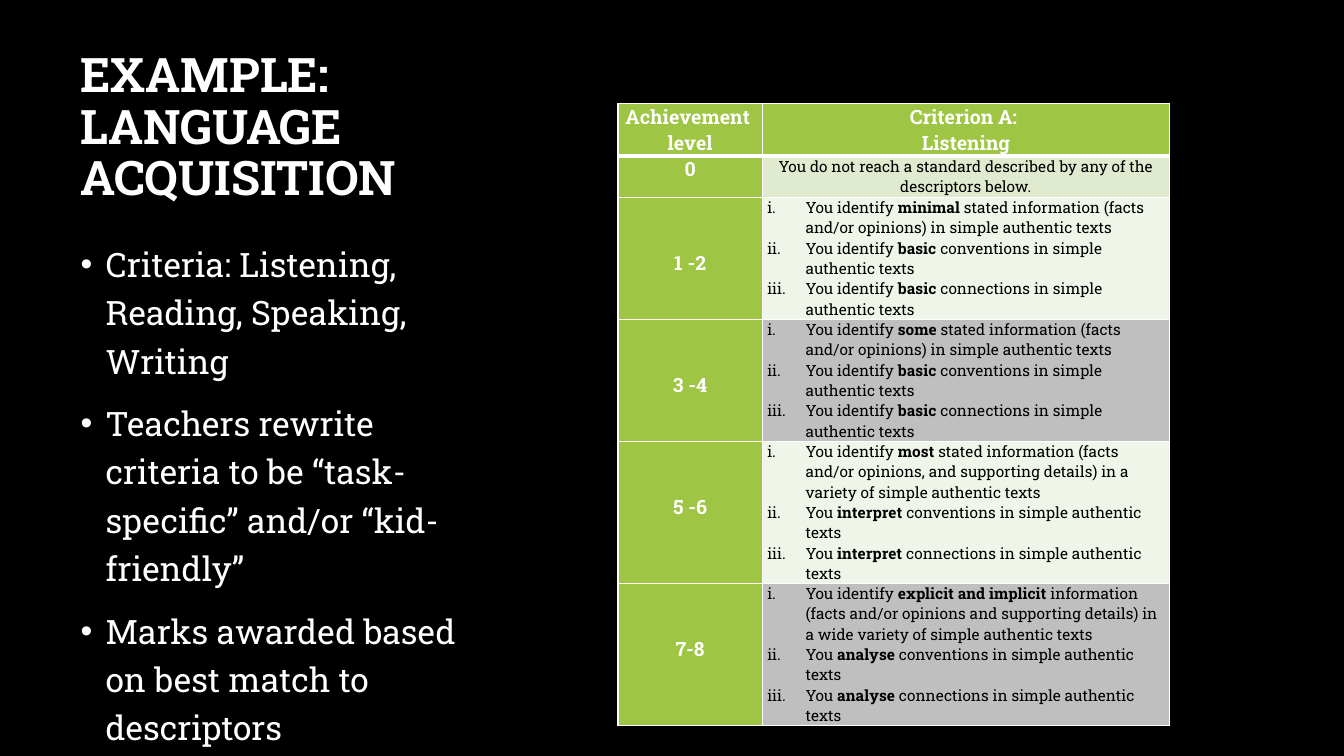
import lxml.etree
import pptx
import pptx.dml.color
import pptx.enum.text
import pptx.oxml.ns
import pptx.util

FONT = "Roboto Slab"
WIDTH, HEIGHT = 13.33, 7.5
BLACK, WHITE, GREEN = "000000", "FFFFFF", "9EC544"
MINT, PALE, GREY = "DFEACF", "F0F5E9", "BFBFBF"
INDENT_BODY, INDENT_CELL = 0.25, 0.38
LEVEL_DROP = 0.52
ALIGN = pptx.enum.text.PP_ALIGN
ANCHOR = pptx.enum.text.MSO_ANCHOR

TITLE = "EXAMPLE: LANGUAGE ACQUISITION"
POINTS = [
    "Criteria: Listening, Reading, Speaking, Writing",
    "Teachers rewrite criteria to be “task-specific” and/or “kid-friendly”",
    "Marks awarded based on best match to descriptors",
]
COLUMNS = [1.43, 4.04]
ROWS = [0.52, 0.41, 1.21, 1.21, 1.41, 1.41]
HEADERS = [["Achievement ", "level"], ["Criterion A: ", "Listening"]]
ZERO_TEXT = "You do not reach a standard described by any of the descriptors below."
LEVELS = [
    ("1 -2", PALE, [
        "You identify *minimal* stated information (facts and/or opinions) in simple authentic texts",
        "You identify* basic *conventions in simple authentic texts",
        "You identify *basic* connections in simple authentic texts"]),
    ("3 -4", GREY, [
        "You identify *some *stated information (facts and/or opinions) in simple authentic texts",
        "You identify *basic* conventions in simple authentic texts",
        "You identify *basic* connections in simple authentic texts"]),
    ("5 -6", PALE, [
        "You identify *most *stated information (facts and/or opinions, and supporting details) "
        "in a variety of simple authentic texts",
        "You *interpret* conventions in simple authentic texts",
        "You* interpret *connections in simple authentic texts"]),
    ("7-8", GREY, [
        "You identify *explicit and implicit *information (facts and/or opinions and supporting "
        "details) in a wide variety of simple authentic texts",
        "You* analyse *conventions in simple authentic texts",
        "You *analyse* connections in simple authentic texts"]),
]


def color(value):
    """Turn a hex string into a colour."""
    return pptx.dml.color.RGBColor.from_string(value)


def add_element(parent, tag, **attributes):
    """Append a DrawingML element to its parent."""
    element = lxml.etree.SubElement(parent, pptx.oxml.ns.qn(tag))
    for name, value in attributes.items():
        element.set(name, str(value))
    return element


def write(frame, lines, size, ink, bold=False, align=ALIGN.LEFT):
    """Fill a frame with one paragraph per line; asterisks enclose bold words."""
    frame.word_wrap = True
    for index, line in enumerate(lines):
        paragraph = frame.paragraphs[0] if index == 0 else frame.add_paragraph()
        paragraph.alignment = align
        paragraph.font.name = FONT
        paragraph.font.size = pptx.util.Pt(size)
        paragraph.font.color.rgb = color(ink)
        for part, words in enumerate(line.split("*")):
            run = paragraph.add_run()
            run.text = words
            run.font.bold = bold or part % 2 == 1
    return frame.paragraphs


def add_bullets(paragraphs, indent, font, tag, **attributes):
    """Hang a bullet or number on each paragraph, keeping its font properties last."""
    distance = pptx.util.Inches(indent)
    for paragraph in paragraphs:
        properties = paragraph._p.get_or_add_pPr()
        properties.set("marL", str(distance))
        properties.set("indent", str(-distance))
        add_element(properties, "a:buFont", typeface=font)
        add_element(properties, tag, **attributes)
        properties.append(properties.find(pptx.oxml.ns.qn("a:defRPr")))


def add_box(slide, box):
    """Add a text box at left, top, width, height in inches."""
    return slide.shapes.add_textbox(*map(pptx.util.Inches, box)).text_frame


def add_title(slide, box):
    """Place the title at the bottom of its box."""
    frame = add_box(slide, box)
    frame.vertical_anchor = ANCHOR.BOTTOM
    for paragraph in write(frame, [TITLE], 34, WHITE, bold=True):
        paragraph.line_spacing = 0.9


def add_points(slide, box):
    """Place the bulleted points."""
    paragraphs = write(add_box(slide, box), POINTS, 24, WHITE)
    for paragraph in paragraphs:
        paragraph.line_spacing = 1.2
        paragraph.space_before = pptx.util.Pt(10)
    add_bullets(paragraphs, INDENT_BODY, "Arial", "a:buChar", char="•")


def style_cell(cell, row, fill):
    """Set the margins, white borders and fill of a cell."""
    cell.margin_left = cell.margin_right = pptx.util.Inches(0.05)
    cell.margin_top = cell.margin_bottom = 0
    properties = cell._tc.get_or_add_tcPr()
    for side in "LRTB":
        thick = (row, side) in [(0, "B"), (1, "T")]
        line = add_element(properties, f"a:ln{side}", w=pptx.util.Pt(3 if thick else 1))
        add_element(add_element(line, "a:solidFill"), "a:srgbClr", val=WHITE)
    cell.fill.solid()
    cell.fill.fore_color.rgb = color(fill)


def add_rubric(slide, box):
    """Place the table of achievement levels."""
    bounds = map(pptx.util.Inches, box)
    table = slide.shapes.add_table(len(ROWS), len(COLUMNS), *bounds).table
    for column, width in zip(table.columns, COLUMNS):
        column.width = pptx.util.Inches(width)
    for row, height in zip(table.rows, ROWS):
        row.height = pptx.util.Inches(height)
    fills = [GREEN, MINT] + [fill for _, fill, _ in LEVELS]
    for row, fill in enumerate(fills):
        style_cell(table.cell(row, 0), row, GREEN)
        style_cell(table.cell(row, 1), row, fill)
    for column, lines in enumerate(HEADERS):
        write(table.cell(0, column).text_frame, lines, 14, WHITE, True, ALIGN.CENTER)
    write(table.cell(1, 0).text_frame, ["0"], 14, WHITE, True, ALIGN.CENTER)
    write(table.cell(1, 1).text_frame, [ZERO_TEXT], 11, BLACK, align=ALIGN.CENTER)
    table.cell(1, 1).vertical_anchor = ANCHOR.MIDDLE
    for row, (level, _, descriptors) in enumerate(LEVELS, 2):
        level_cell = table.cell(row, 0)
        level_cell.margin_top = pptx.util.Inches(LEVEL_DROP)
        write(level_cell.text_frame, [level], 14, WHITE, True, ALIGN.CENTER)
        paragraphs = write(table.cell(row, 1).text_frame, descriptors, 11, BLACK)
        add_bullets(paragraphs, INDENT_CELL, FONT, "a:buAutoNum", type="romanLcPeriod")


def main():
    """Build the slide and save it."""
    presentation = pptx.Presentation()
    presentation.slide_width = pptx.util.Inches(WIDTH)
    presentation.slide_height = pptx.util.Inches(HEIGHT)
    slide = presentation.slides.add_slide(presentation.slide_layouts[6])
    slide.background.fill.solid()
    slide.background.fill.fore_color.rgb = color(BLACK)
    add_title(slide, (0.7, 0.35, 4.31, 1.74))
    add_points(slide, (0.7, 2.29, 4.31, 4.86))
    add_rubric(slide, (6.13, 1.03, sum(COLUMNS), sum(ROWS)))
    presentation.save("out.pptx")


if __name__ == "__main__":
    main()
